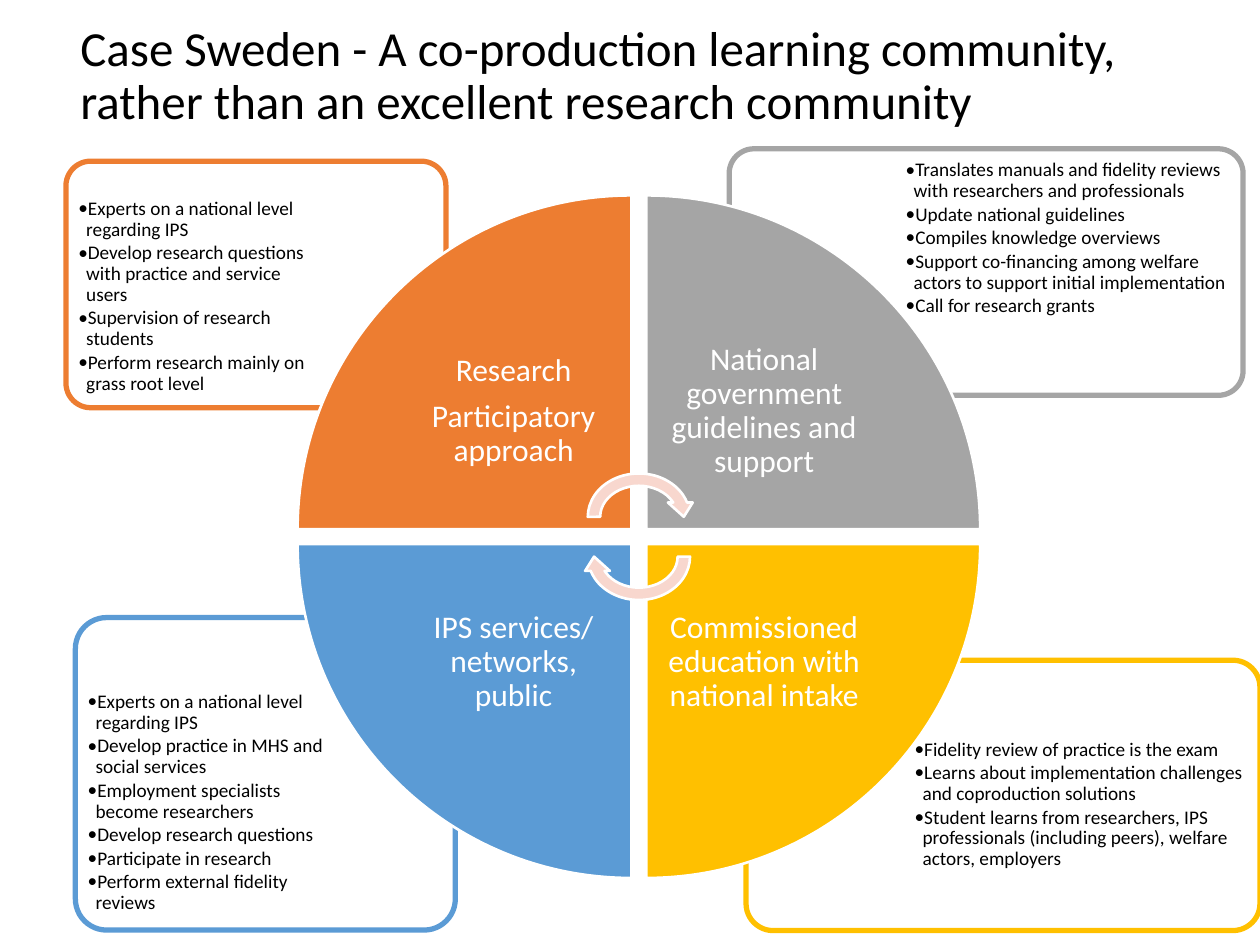
import math

from lxml import etree
from pptx import Presentation
from pptx.dml.color import RGBColor
from pptx.enum.shapes import MSO_SHAPE
from pptx.enum.text import MSO_ANCHOR, PP_ALIGN
from pptx.oxml.ns import qn
from pptx.util import Cm, Pt

ROUNDED = MSO_SHAPE.ROUNDED_RECTANGLE
CIRCULAR_ARROW = MSO_SHAPE.CIRCULAR_ARROW
TOP, MIDDLE = MSO_ANCHOR.TOP, MSO_ANCHOR.MIDDLE
LEFT, CENTER = PP_ALIGN.LEFT, PP_ALIGN.CENTER

FONT = "Calibri"
BLACK = RGBColor(0x00, 0x00, 0x00)
WHITE = RGBColor(0xFF, 0xFF, 0xFF)
ORANGE = RGBColor(0xED, 0x7D, 0x31)
GRAY = RGBColor(0xA5, 0xA5, 0xA5)
YELLOW = RGBColor(0xFF, 0xC0, 0x00)
BLUE = RGBColor(0x5B, 0x9B, 0xD5)
PINK = RGBColor(0xF8, 0xD7, 0xCE)

# Lengths in centimetres
HUB_X, HUB_Y = 12.88, 10.82
RADIUS = 6.73
GAP = 0.3
CORNER = 0.1  # corner radius as a share of the shorter side
WIDE_INSET, NARROW_INSET = 2.34, 0.36
ARC_HANDLE = 4 / 3 * (math.sqrt(2) - 1)  # Bezier handle of a quarter circle

# Each quarter: colour, horizontal and vertical direction from the hub, label
QUARTERS = [
    (ORANGE, -1, -1, ["Research", "Participatory approach"]),
    (GRAY, 1, -1, ["National government guidelines and support"]),
    (YELLOW, 1, 1, ["Commissioned education with national intake"]),
    (BLUE, -1, 1, ["IPS services/ networks, public"]),
]

# Each note: colour, box (left, top, width, height), insets (l, t, r, b), bullets
NOTES = [
    (YELLOW, (15.04, 13.31, 10.36, 5.45), (3.4, 1.6, 0.23, 0.23), [
        "Fidelity review of practice is the exam",
        "Learns about implementation challenges and coproduction solutions",
        "Student learns from researchers, IPS professionals (including peers), "
        "welfare actors, employers",
    ]),
    (BLUE, (1.52, 12.45, 7.66, 6.3), (0.25, 1.5, 2.54, 0.25), [
        "Experts on a national level regarding IPS",
        "Develop practice in MHS and social services",
        "Employment specialists become researchers",
        "Develop research questions",
        "Participate in research",
        "Perform external fidelity reviews",
    ]),
    (GRAY, (14.7, 3.0, 10.36, 4.97), (3.56, 0.23, 0.23, 1.47), [
        "Translates manuals and fidelity reviews with researchers and professionals",
        "Update national guidelines",
        "Compiles knowledge overviews",
        "Support co-financing among welfare actors to support initial implementation",
        "Call for research grants",
    ]),
    (ORANGE, (1.33, 3.25, 7.66, 4.97), (0.25, 0.76, 2.54, 0.25), [
        "Experts on a national level regarding IPS",
        "Develop research questions with practice and service users",
        "Supervision of research students",
        "Perform research mainly on grass root level",
    ]),
]


def style_shape(shape, fill, line, width):
    shape.shadow.inherit = False
    shape.fill.solid()
    shape.fill.fore_color.rgb = fill
    shape.line.color.rgb = line
    shape.line.width = Pt(width)


def add_bullet(paragraph):
    properties = paragraph._p.get_or_add_pPr()
    properties.set("marL", str(Cm(0.16)))
    properties.set("indent", str(-Cm(0.16)))
    etree.SubElement(properties, qn("a:buFont")).set("typeface", FONT)
    etree.SubElement(properties, qn("a:buChar")).set("char", "•")


def write_text(shape, lines, insets, size, color, space, align, anchor, bullets=False):
    frame = shape.text_frame
    frame.word_wrap = True
    frame.vertical_anchor = anchor
    (frame.margin_left, frame.margin_top,
     frame.margin_right, frame.margin_bottom) = [Cm(inset) for inset in insets]
    frame.text = "\n".join(lines)
    for paragraph in frame.paragraphs:
        if bullets:
            add_bullet(paragraph)
        paragraph.alignment = align
        paragraph.line_spacing = 0.9
        paragraph.space_after = Pt(space)
        paragraph.font.name = FONT
        paragraph.font.size = Pt(size)
        paragraph.font.color.rgb = color


def place_title(slide, text):
    title = slide.shapes.title
    title.left, title.top, title.width, title.height = Cm(1.37), Cm(0.43), Cm(21.9), Cm(2.26)
    write_text(title, [text], (0.25, 0.13, 0.25, 0.13), 28, BLACK, 0, LEFT, MIDDLE)


def add_note(slide, color, box, insets, bullets):
    note = slide.shapes.add_shape(ROUNDED, *[Cm(length) for length in box])
    note.adjustments[0] = CORNER
    style_shape(note, WHITE, color, 3)
    # The rounded corners already push the text inwards
    corner_inset = (1 - math.sqrt(0.5)) * CORNER * min(box[2:])
    insets = [inset - corner_inset for inset in insets]
    write_text(note, bullets, insets, 11, BLACK, 1.6, LEFT, TOP, bullets=True)


def round_outer_edge(quarter):
    """Turn the straight edge opposite the tip into a quarter circle."""
    edges = list(quarter._element.iter(qn("a:lnTo")))
    (start_x, start_y), (end_x, end_y) = [
        (int(edge[0].get("x")), int(edge[0].get("y"))) for edge in edges[:2]]
    points = [
        (start_x, start_y + ARC_HANDLE * (end_y - start_y)),
        (end_x + ARC_HANDLE * (start_x - end_x), end_y),
        (end_x, end_y),
    ]
    curve = etree.Element(qn("a:cubicBezTo"))
    for x, y in points:
        etree.SubElement(curve, qn("a:pt"), x=str(round(x)), y=str(round(y)))
    edges[1].getparent().replace(edges[1], curve)


def add_quarter(slide, color, across, down, label):
    tip_x, tip_y = HUB_X + across * GAP / 2, HUB_Y + down * GAP / 2
    builder = slide.shapes.build_freeform(Cm(tip_x), Cm(tip_y))
    builder.add_line_segments([
        (Cm(tip_x + across * RADIUS), Cm(tip_y)),
        (Cm(tip_x), Cm(tip_y + down * RADIUS)),
    ], close=True)
    quarter = builder.convert_to_shape()
    round_outer_edge(quarter)
    style_shape(quarter, color, WHITE, 1.5)
    # The label keeps to the half nearest the hub
    horizontal = (WIDE_INSET, NARROW_INSET)[::-across]
    vertical = (WIDE_INSET, NARROW_INSET)[::-down]
    insets = (horizontal[0], vertical[0], horizontal[1], vertical[1])
    write_text(quarter, label, insets, 18, WHITE, 7, CENTER, MIDDLE)


def add_cycle_arrow(slide, offset, rotation):
    width, height = 2.31, 2.0
    arrow = slide.shapes.add_shape(
        CIRCULAR_ARROW, Cm(HUB_X - width / 2), Cm(HUB_Y + offset - height / 2),
        Cm(width), Cm(height))
    arrow.rotation = rotation
    style_shape(arrow, PINK, WHITE, 1.5)


def main():
    presentation = Presentation()
    presentation.slide_width, presentation.slide_height = Cm(25.4), Cm(19.05)
    slide = presentation.slides.add_slide(presentation.slide_layouts[5])

    place_title(slide, "Case Sweden - A co-production learning community, "
                       "rather than an excellent research community")
    # Notes lie behind the circle
    for note in NOTES:
        add_note(slide, *note)
    for quarter in QUARTERS:
        add_quarter(slide, *quarter)
    # Arrows turning around the hub
    add_cycle_arrow(slide, -0.4, 0)
    add_cycle_arrow(slide, 0.4, 180)

    presentation.save("out.pptx")


if __name__ == "__main__":
    main()
